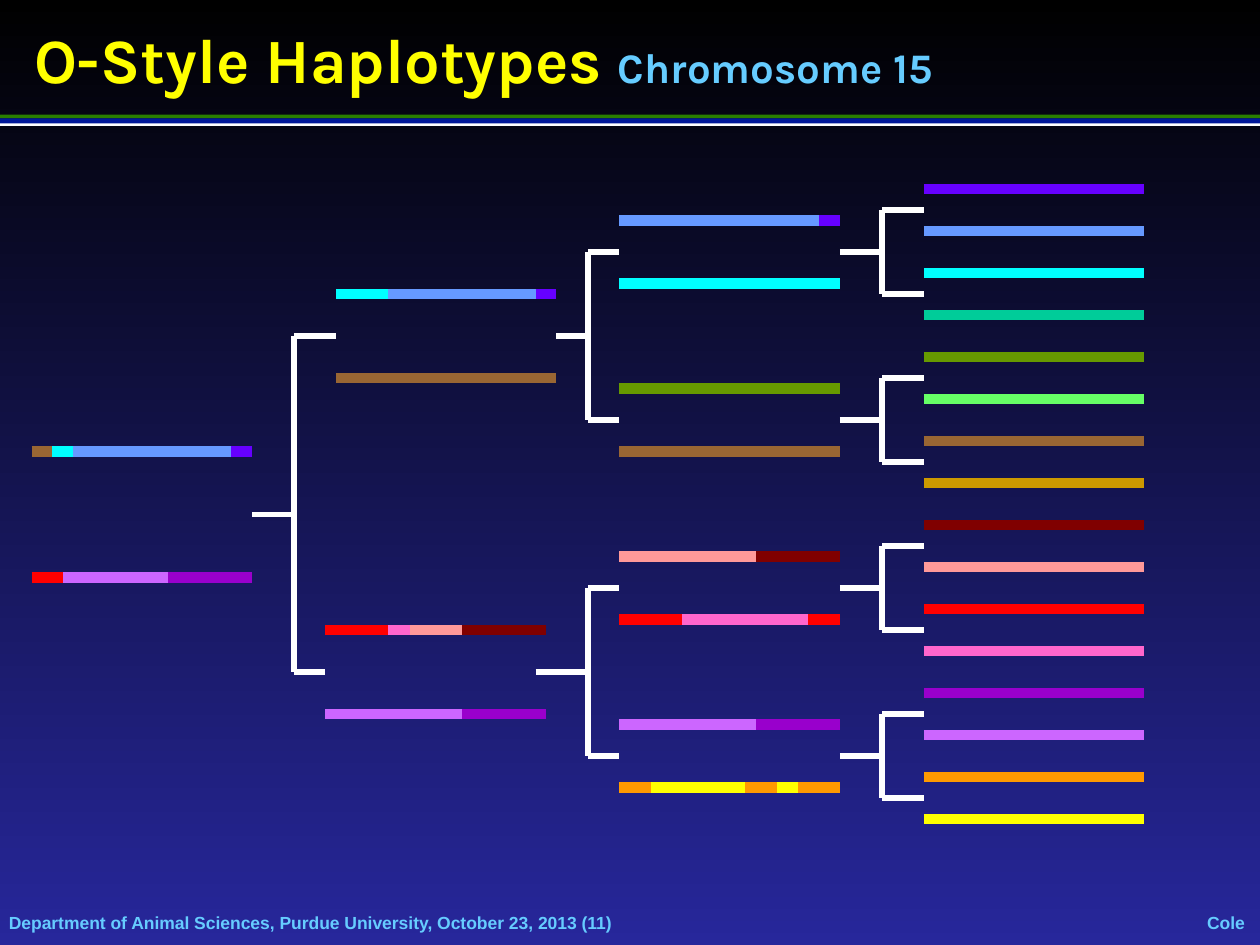
from lxml.etree import SubElement
from pptx import Presentation
from pptx.dml.color import RGBColor
from pptx.enum.shapes import MSO_CONNECTOR, MSO_SHAPE
from pptx.enum.text import MSO_ANCHOR, MSO_AUTO_SIZE, PP_ALIGN
from pptx.oxml.ns import qn
from pptx.util import Inches, Pt

UNIT = 1 / 12
WHITE, YELLOW, SKY = "FFFFFF", "FFFF00", "66CCFF"
VIOLET, BLUE, CYAN, TEAL = "6600FF", "6699FF", "00FFFF", "00CC99"
OLIVE, LIME, BROWN, GOLD = "669900", "66FF66", "996633", "CC9900"
MAROON, SALMON, RED, PINK = "800000", "FF9999", "FF0000", "FF66CC"
PURPLE, LILAC, ORANGE = "9900CC", "CC66FF", "FF9900"

GREAT_GRANDPARENTS = [
    VIOLET, BLUE, CYAN, TEAL, OLIVE, LIME, BROWN, GOLD,
    MAROON, SALMON, RED, PINK, PURPLE, LILAC, ORANGE, YELLOW,
]

HAPLOTYPES = [
    (43, 3, [(5, BROWN), (7, CYAN), (22, BLUE), (24, VIOLET)]),
    (55, 3, [(6, RED), (16, LILAC), (24, PURPLE)]),
    (28, 32, [(37, CYAN), (51, BLUE), (53, VIOLET)]),
    (36, 32, [(53, BROWN)]),
    (60, 31, [(37, RED), (39, PINK), (44, SALMON), (52, MAROON)]),
    (68, 31, [(44, LILAC), (52, PURPLE)]),
    (21, 59, [(78, BLUE), (80, VIOLET)]),
    (27, 59, [(80, CYAN)]),
    (37, 59, [(80, OLIVE)]),
    (43, 59, [(80, BROWN)]),
    (53, 59, [(72, SALMON), (80, MAROON)]),
    (59, 59, [(65, RED), (77, PINK), (80, RED)]),
    (69, 59, [(72, LILAC), (80, PURPLE)]),
    (75, 59, [(62, ORANGE), (71, YELLOW), (74, ORANGE), (76, YELLOW), (80, ORANGE)]),
]
HAPLOTYPES += [(18 + 4 * i, 88, [(109, c)]) for i, c in enumerate(GREAT_GRANDPARENTS)]

BRACKETS = [
    (24, 49, 28, [(32, 32), (31, 64)]),
    (53, 32, 56, [(59, 24), (59, 40)]),
    (51, 64, 56, [(59, 56), (59, 72)]),
]
BRACKETS += [(80, y, 84, [(88, y - 4), (88, y + 4)]) for y in (24, 40, 56, 72)]


def rgb(value):
    """Turn a hex string into a colour."""
    return RGBColor.from_string(value)


class Deck:
    """Hold the style and the current slide."""

    def __init__(self):
        """Open a presentation with one title-only slide."""
        self.prs = Presentation()
        self.prs.slide_width, self.prs.slide_height = Inches(10), Inches(7.5)
        self.s = self.prs.slides.add_slide(self.prs.slide_layouts[5])

    def background(self, top, bottom):
        """Fill the slide with a vertical gradient."""
        fill = self.s.background.fill
        fill.gradient()
        fill.gradient_angle = 270
        for stop, color, pos in zip(fill.gradient_stops, (top, bottom), (0, 1)):
            stop.color.rgb, stop.position = rgb(color), pos

    def place(self, sp, box):
        """Set the position and size of a shape in inches."""
        for name, value in zip(("left", "top", "width", "height"), box):
            setattr(sp, name, Inches(value))

    def add_text(self, sp, runs, frame, align):
        """Add one paragraph of (text, size, colour, font) runs."""
        tf = sp.text_frame
        for name, value in frame.items():
            setattr(tf, name, value)
        p = tf.paragraphs[0]
        p.alignment = align
        for text, size, color, font in runs:
            r = p.add_run()
            r.text = text
            for name, value in {"size": Pt(size), "name": font, "bold": True}.items():
                setattr(r.font, name, value)
            r.font.color.rgb = rgb(color)

    def title(self, box, runs):
        """Fill the title placeholder."""
        sp = self.s.shapes.title
        self.place(sp, box)
        frame = {"vertical_anchor": MSO_ANCHOR.MIDDLE, "auto_size": MSO_AUTO_SIZE.NONE}
        self.add_text(sp, runs, frame, PP_ALIGN.LEFT)

    def footer(self, box, text, wrap, align):
        """Add a footer text box without margins."""
        sp = self.s.shapes.add_textbox(*map(Inches, box))
        frame = {f"margin_{side}": 0 for side in ("left", "top", "right", "bottom")}
        frame |= {"word_wrap": wrap, "vertical_anchor": MSO_ANCHOR.MIDDLE}
        self.add_text(sp, [(text, 10, SKY, "Arial")], frame, align)

    def band(self, top, height, color):
        """Add a full-width band."""
        box = map(Inches, (0, top, 10, height))
        sp = self.s.shapes.add_shape(MSO_SHAPE.RECTANGLE, *box)
        sp.shadow.inherit = False
        sp.fill.solid()
        sp.fill.fore_color.rgb = rgb(color)
        sp.line.fill.background()

    def line(self, x1, y1, x2, y2, color, width):
        """Add a straight line between two points given in twelfths of an inch."""
        ends = [Inches(v * UNIT) for v in (x1, y1, x2, y2)]
        cxn = self.s.shapes.add_connector(MSO_CONNECTOR.STRAIGHT, *ends)
        cxn.line.color.rgb = rgb(color)
        cxn.line.width = Pt(width)
        SubElement(cxn._element.spPr, qn("a:effectLst"))

    def haplotype(self, y, left, segments):
        """Add a bar of (right, colour) segments laid end to end."""
        for right, color in segments:
            self.line(left, y, right, y, color, 6)
            left = right

    def bracket(self, left, y, spine, arms):
        """Add a stem, a spine and two arms given as (right, y)."""
        self.line(left, y, spine, y, WHITE, 3)
        self.line(spine, arms[0][1], spine, arms[1][1], WHITE, 3)
        for right, arm_y in arms:
            self.line(spine, arm_y, right, arm_y, WHITE, 3)


def main():
    """Build and save the slide."""
    deck = Deck()
    deck.background("000000", "27279B")
    deck.footer(
        (0.07, 7.24, 8.09, 0.17),
        "Department of Animal Sciences, Purdue University, October 23, 2013 (11)",
        True, PP_ALIGN.LEFT,
    )
    deck.footer((9.58, 7.24, 0.3, 0.17), "Cole", False, PP_ALIGN.CENTER)
    for band in ((0.91, 0.03, "2A7E00"), (0.97, 0.03, WHITE), (0.94, 0.04, "001799")):
        deck.band(*band)
    deck.title((0.17, 0.11, 9.66, 0.7), [
        ("O-Style Haplotypes ", 36, YELLOW, "Karla"),
        ("Chromosome 15", 24, SKY, "Karla"),
    ])
    for bracket in BRACKETS:
        deck.bracket(*bracket)
    for haplotype in HAPLOTYPES:
        deck.haplotype(*haplotype)
    deck.prs.save("out.pptx")


if __name__ == "__main__":
    main()
